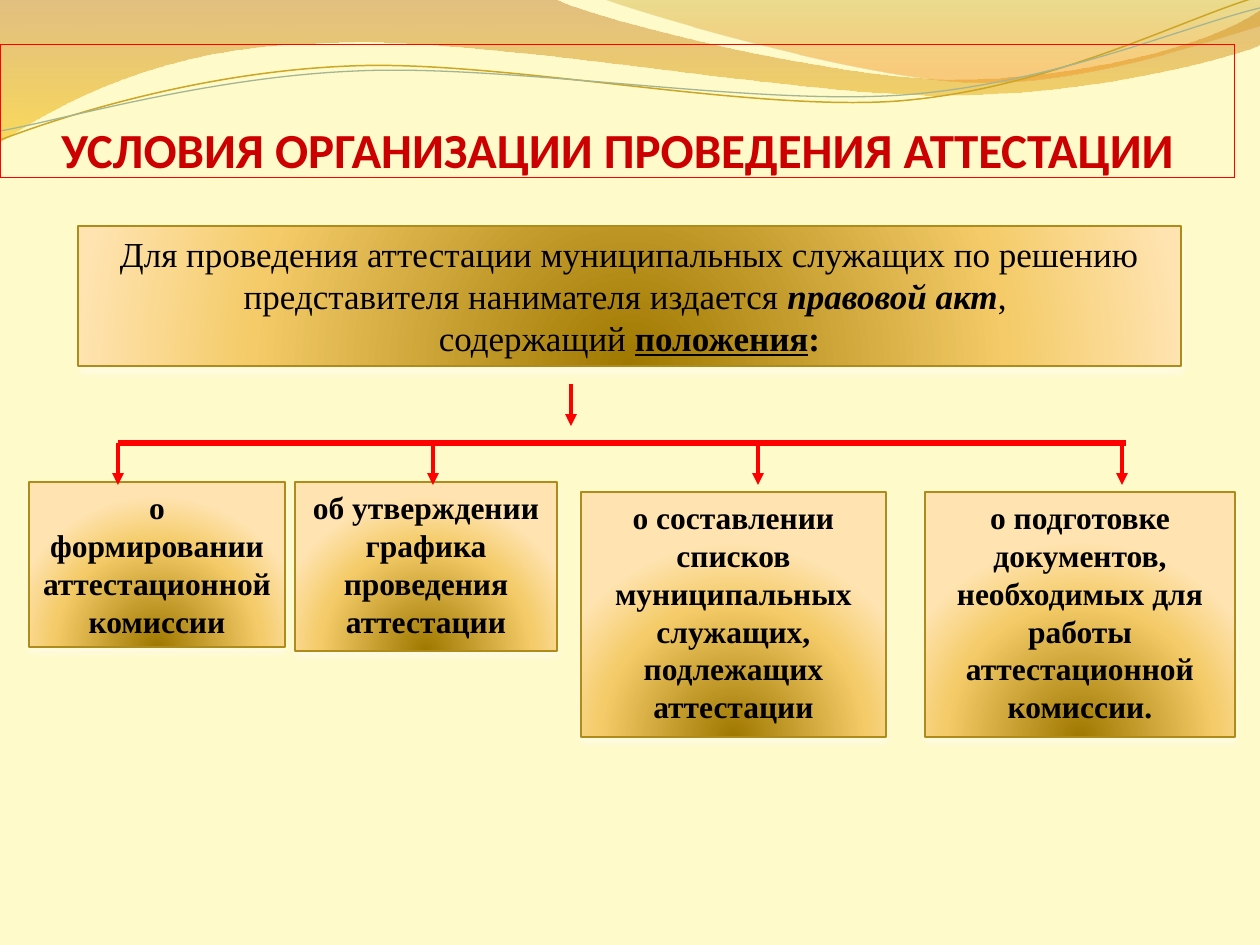
import pptx
import pptx.dml.color
import pptx.enum.shapes
import pptx.enum.text
import pptx.oxml
import pptx.oxml.ns
import pptx.util
from lxml import etree

EMU_PER_PX = 914400 / 126
COLORS = {
    "background": "FEFAC9", "title": "CC0000", "red": "FF0000", "text": "000000",
    "box_line": "AD8C1C", "shadow": "FFFFFF", "gold_line": "CCA624", "green_line": "A5B592",
    "dark_gold": "9F7800", "gold": "F4CB68", "peach": "FFE4B2",
    "brown": "C07A28", "yellow": "F7BF00", "olive": "C09709", "orange": "F59320",
}
BOX_STOPS = [(0, "dark_gold", 100), (68, "gold", 100), (100, "peach", 100)]
BOX_PATH = {"l": "50000", "t": "130000", "r": "50000", "b": "-30000"}
FILLED_WAVES = [
    ([(0, 0), (554, -1), (600, 21, 837, 79, 955, 79), (1075, 79, 1207, 47, 1260, 11),
      (1261, 45), (1239, 55, 1096, 96, 940, 95), (784, 95, 481, 35, 324, 43),
      (161, 45, 58, 105, -1, 142)], [(0, "brown", 45), (100, "yellow", 55)]),
    ([(603, -1), (641, 14, 859, 78, 969, 82), (1079, 87, 1211, 40, 1260, 26), (1260, 0)],
     [(0, "olive", 30), (80, "orange", 45)]),
]
LINE_WAVES = [
    ([(0, 140), (60, 117, 199, 72, 349, 66), (498, 59, 747, 112, 898, 101),
      (1050, 89, 1182, 19, 1257, -3)], "gold_line", 0.85),
    ([(0, 131), (59, 121, 207, 77, 357, 71), (508, 64, 752, 106, 903, 95),
      (1053, 84, 1185, 26, 1260, 8)], "green_line", 0.75),
]
ACT_PARAGRAPHS = [
    [("Для проведения аттестации муниципальных служащих по решению "
      "представителя нанимателя издается ", {}),
     ("правовой акт", {"bold": True, "italic": True}), (", ", {})],
    [("содержащий ", {}), ("положения", {"bold": True, "underline": True}),
     (":", {"bold": True})],
]
PROVISIONS = [
    ((29, 482, 256, 165), "о формировании аттестационной комиссии"),
    ((295, 482, 262, 169), "об утверждении графика проведения аттестации"),
    ((581, 492, 305, 245),
     "о составлении списков муниципальных служащих, подлежащих аттестации"),
    ((925, 492, 310, 245),
     "о подготовке документов, необходимых для работы аттестационной комиссии."),
]
BAR_Y, ARROW_LENGTH = 443, 42
ARROW_STARTS = [(x, BAR_Y) for x in (118, 433, 758, 1122)] + [(571, 384)]


def px(value):
    """Turn pixels into EMU."""
    return pptx.util.Emu(round(value * EMU_PER_PX))


def color(name):
    """Look up a named colour."""
    return pptx.dml.color.RGBColor.from_string(COLORS[name])


def add_element(parent, tag, **attributes):
    """Append a DrawingML child and return it."""
    return etree.SubElement(parent, pptx.oxml.ns.qn("a:" + tag), attributes)


def add_color(parent, name, opacity):
    """Append a colour with opacity in percent."""
    element = add_element(parent, "srgbClr", val=COLORS[name])
    if opacity < 100:
        add_element(element, "alpha", val=str(opacity * 1000))


def set_gradient(shape, stops, circle=None):
    """Fill with a vertical gradient, or a circular one around the given rectangle."""
    shape.fill.gradient()
    gradient = shape.element.spPr.find(pptx.oxml.ns.qn("a:gradFill"))
    gradient.clear()
    stop_list = add_element(gradient, "gsLst")
    for position, name, opacity in stops:
        add_color(add_element(stop_list, "gs", pos=str(position * 1000)), name, opacity)
    if circle:
        add_element(add_element(gradient, "path", path="circle"), "fillToRect", **circle)
    else:
        add_element(gradient, "lin", ang="5400000", scaled="0")


def set_line(shape, name, width=None):
    """Set the colour of a line and, if given, its width."""
    shape.line.color.rgb = color(name)
    if width:
        shape.line.width = pptx.util.Pt(width)


def bend(shape, segments):
    """Join each three control points of the outline into a cubic curve."""
    lines = iter(list(shape.element.iter(pptx.oxml.ns.qn("a:lnTo"))))
    for segment in segments[1:]:
        first = next(lines)
        if len(segment) == 6:
            first.tag = pptx.oxml.ns.qn("a:cubicBezTo")
            for line in (next(lines), next(lines)):
                first.append(line[0])
                line.getparent().remove(line)


def add_wave(slide, segments, closed):
    """Draw an outline of straight and curved segments."""
    points = [(px(x), px(y)) for segment in segments
              for x, y in zip(segment[::2], segment[1::2])]
    builder = slide.shapes.build_freeform(*points[0])
    builder.add_line_segments(points[1:], close=closed)
    shape = builder.convert_to_shape()
    bend(shape, segments)
    shape.shadow.inherit = False
    return shape


def add_runs(paragraph, runs, font_name, size, color_name):
    """Add centred runs with their own font styles."""
    paragraph.alignment = pptx.enum.text.PP_ALIGN.CENTER
    for text, styles in runs:
        run = paragraph.add_run()
        run.text = text
        run.font.name = font_name
        run.font.size = pptx.util.Pt(size)
        run.font.color.rgb = color(color_name)
        for style in ("bold", "italic", "underline"):
            setattr(run.font, style, styles.get(style, False))


def format_title(slide, text):
    """Place the title above the waves and format it."""
    title = slide.shapes.title
    title.element.getparent().append(title.element)
    title.left, title.top, title.width, title.height = map(px, (0, 45, 1235, 133))
    set_line(title, "red")
    frame = title.text_frame
    frame.word_wrap = True
    frame.auto_size = pptx.enum.text.MSO_AUTO_SIZE.NONE
    frame.vertical_anchor = pptx.enum.text.MSO_ANCHOR.BOTTOM
    frame.margin_left = frame.margin_right = frame.margin_bottom = 0
    frame.margin_top = pptx.util.Inches(0.05)
    add_runs(frame.paragraphs[0], [(text, {"bold": True})], "Calibri", 28, "title")


def add_box(slide, bounds, paragraphs, size):
    """Add a golden box with a soft shadow."""
    shape = slide.shapes.add_shape(
        pptx.enum.shapes.MSO_SHAPE.RECTANGLE, *map(px, bounds))
    set_gradient(shape, BOX_STOPS, BOX_PATH)
    set_line(shape, "box_line", 0.75)
    shape.shadow.inherit = False
    effects = shape.element.spPr.find(pptx.oxml.ns.qn("a:effectLst"))
    shadow = add_element(effects, "outerShdw", blurRad="57150", dist="38100",
                         dir="5400000", rotWithShape="0")
    add_color(shadow, "shadow", 48)
    frame = shape.text_frame
    frame.word_wrap = True
    frame.auto_size = pptx.enum.text.MSO_AUTO_SIZE.SHAPE_TO_FIT_TEXT
    frame.vertical_anchor = pptx.enum.text.MSO_ANCHOR.TOP
    for index, runs in enumerate(paragraphs):
        paragraph = frame.add_paragraph() if index else frame.paragraphs[0]
        add_runs(paragraph, runs, "Times New Roman", size, "text")


def add_line(slide, start, end, width, arrow=False):
    """Add a red line, with an arrowhead if asked."""
    connector = slide.shapes.add_connector(
        pptx.enum.shapes.MSO_CONNECTOR.STRAIGHT, *map(px, (*start, *end)))
    set_line(connector, "red", width)
    properties = connector.element.spPr
    if arrow:
        add_element(properties.find(pptx.oxml.ns.qn("a:ln")), "tailEnd", type="triangle")
    add_element(properties, "effectLst")


def main():
    """Build the slide and save it."""
    presentation = pptx.Presentation()
    presentation.slide_width, presentation.slide_height = px(1260), px(945)
    slide = presentation.slides.add_slide(presentation.slide_layouts[5])
    slide.background.fill.solid()
    slide.background.fill.fore_color.rgb = color("background")
    for segments, stops in FILLED_WAVES:
        wave = add_wave(slide, segments, True)
        set_gradient(wave, stops)
        wave.line.fill.background()
    for segments, name, width in LINE_WAVES:
        wave = add_wave(slide, segments, False)
        wave.fill.background()
        set_line(wave, name, width)
    format_title(slide, "УСЛОВИЯ ОРГАНИЗАЦИИ ПРОВЕДЕНИЯ АТТЕСТАЦИИ")
    add_box(slide, (78, 226, 1103, 140), ACT_PARAGRAPHS, 20)
    for bounds, text in PROVISIONS:
        add_box(slide, bounds, [[(text, {"bold": True})]], 18)
    add_line(slide, (118, BAR_Y), (1126, BAR_Y), 3)
    for x, y in ARROW_STARTS:
        add_line(slide, (x, y), (x, y + ARROW_LENGTH), 2.25, arrow=True)
    presentation.save("out.pptx")


if __name__ == "__main__":
    main()
